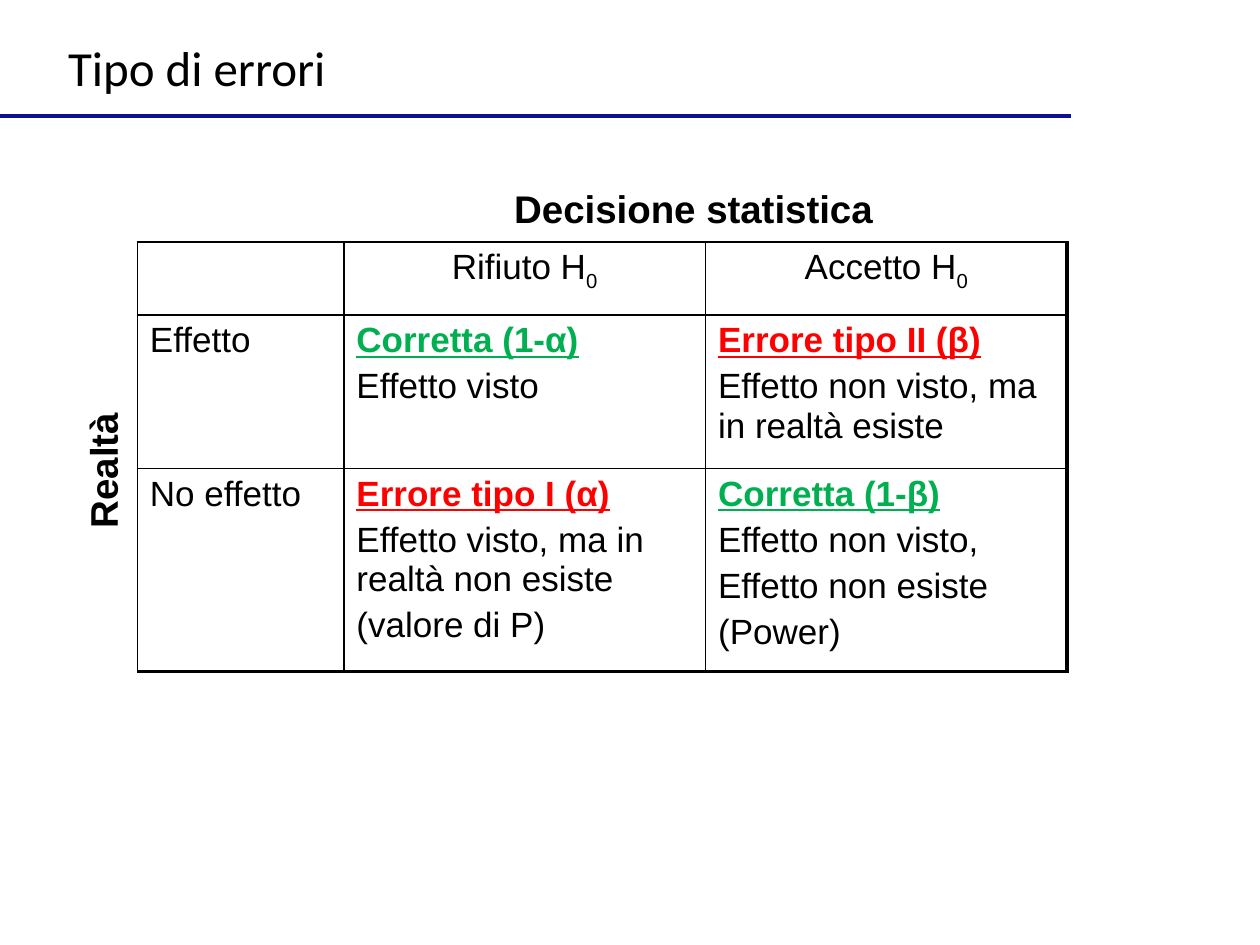
"""Builds a slide with the table of statistical error types."""
from dataclasses import dataclass

from lxml import etree
from pptx import Presentation
from pptx.dml.color import RGBColor
from pptx.enum import shapes, text
from pptx.oxml import ns
from pptx.util import Pt


@dataclass(frozen=True)
class Theme:
    ink: str = "000000"
    right: str = "00B050"
    wrong: str = "FF0000"
    rule: str = "0C1290"
    title_font: str = "Calibri"
    body_font: str = "Arial"
    title_size: float = 28
    label_size: float = 22
    cell_size: float = 20
    thin: float = 1
    thick: float = 2.25


THEME = Theme()
TITLE = ("Tipo di errori", (31.7, 18, 163.4, 41))
LABELS = [
    ("Decisione statistica", (285.1, 102.2, 222.5, 33.8), 0),
    ("Realtà", (18, 252, 81.4, 33.8), 270),
]
HEADERS = [("Rifiuto H", "0"), ("Accetto H", "0")]
OUTCOMES = [
    ("Effetto", [
        ("Corretta (1-α)", THEME.right, ["Effetto visto"]),
        ("Errore tipo II (β)", THEME.wrong, ["Effetto non visto, ma in realtà esiste"]),
    ]),
    ("No effetto", [
        ("Errore tipo I (α)", THEME.wrong,
         ["Effetto visto, ma in realtà non esiste", "(valore di P)"]),
        ("Corretta (1-β)", THEME.right,
         ["Effetto non visto,", "Effetto non esiste", "(Power)"]),
    ]),
]
TABLE_LEFT, TABLE_TOP = 78.5, 138.2
COLUMNS = [118, 206.7, 206.7]
ROWS = [41.8, 87.8, 115.9]
RULE_Y, RULE_END = 66.2, 612


def write(para, words, font=THEME.body_font, size=THEME.cell_size, color=THEME.ink,
          bold=False, underline=False, align=text.PP_ALIGN.LEFT, baseline=0, before=0):
    para.alignment = align
    para.space_before = Pt(before)
    span = para.add_run()
    span.text = words
    span.font.name, span.font.size = font, Pt(size)
    span.font.bold, span.font.underline = bold, underline
    span.font.color.rgb = RGBColor.from_string(color)
    if baseline:
        span.font._element.set("baseline", str(baseline))


def place(shape, bounds):
    shape.left, shape.top, shape.width, shape.height = map(Pt, bounds)


def add_title(page):
    words, bounds = TITLE
    title = page.shapes.title
    place(title, bounds)
    frame = title.text_frame
    frame.word_wrap = False
    frame.auto_size = text.MSO_AUTO_SIZE.NONE
    frame.vertical_anchor = text.MSO_ANCHOR.MIDDLE
    write(frame.paragraphs[0], words, font=THEME.title_font, size=THEME.title_size)


def add_rule(page):
    rule = page.shapes.add_connector(
        shapes.MSO_CONNECTOR.STRAIGHT, Pt(0), Pt(RULE_Y), Pt(RULE_END), Pt(RULE_Y))
    rule.line.color.rgb = RGBColor.from_string(THEME.rule)
    rule.line.width = Pt(2)
    etree.SubElement(rule._element.spPr, ns.qn("a:effectLst"))


def add_label(page, words, bounds, rotation):
    box = page.shapes.add_textbox(*map(Pt, bounds))
    box.rotation = rotation
    box.text_frame.word_wrap = False
    write(box.text_frame.paragraphs[0], words, size=THEME.label_size, bold=True,
          align=text.PP_ALIGN.CENTER)


def style_cell(cell, last_column, last_row):
    widths = {"L": THEME.thin, "R": THEME.thick if last_column else THEME.thin,
              "T": THEME.thin, "B": THEME.thick if last_row else THEME.thin}
    properties = cell._tc.get_or_add_tcPr()
    for side, width in widths.items():
        line = etree.SubElement(properties, ns.qn(f"a:ln{side}"), w=str(int(Pt(width))))
        fill = etree.SubElement(line, ns.qn("a:solidFill"))
        etree.SubElement(fill, ns.qn("a:srgbClr"), val=THEME.ink)
    cell.fill.background()


def add_outcomes(page):
    frame = page.shapes.add_table(
        len(ROWS), len(COLUMNS), Pt(TABLE_LEFT), Pt(TABLE_TOP), Pt(sum(COLUMNS)), Pt(sum(ROWS)))
    table = frame.table
    table.first_row = table.horz_banding = False
    for column, width in zip(table.columns, COLUMNS):
        column.width = Pt(width)
    for row, height in zip(table.rows, ROWS):
        row.height = Pt(height)
    for r in range(len(ROWS)):
        for c in range(len(COLUMNS)):
            style_cell(table.cell(r, c), c == len(COLUMNS) - 1, r == len(ROWS) - 1)
    for c, (words, index) in enumerate(HEADERS, 1):
        para = table.cell(0, c).text_frame.paragraphs[0]
        write(para, words, align=text.PP_ALIGN.CENTER)
        write(para, index, align=text.PP_ALIGN.CENTER, baseline=-25000)
    for r, (reality, verdicts) in enumerate(OUTCOMES, 1):
        write(table.cell(r, 0).text_frame.paragraphs[0], reality)
        for c, (verdict, color, details) in enumerate(verdicts, 1):
            body = table.cell(r, c).text_frame
            write(body.paragraphs[0], verdict, color=color, bold=True, underline=True)
            for detail in details:
                write(body.add_paragraph(), detail, before=4)


def main():
    deck = Presentation()
    deck.slide_width, deck.slide_height = Pt(720), Pt(540)
    page = deck.slides.add_slide(deck.slide_layouts[5])
    add_outcomes(page)
    add_title(page)
    add_rule(page)
    for label in LABELS:
        add_label(page, *label)
    deck.save("out.pptx")


if __name__ == "__main__":
    main()
